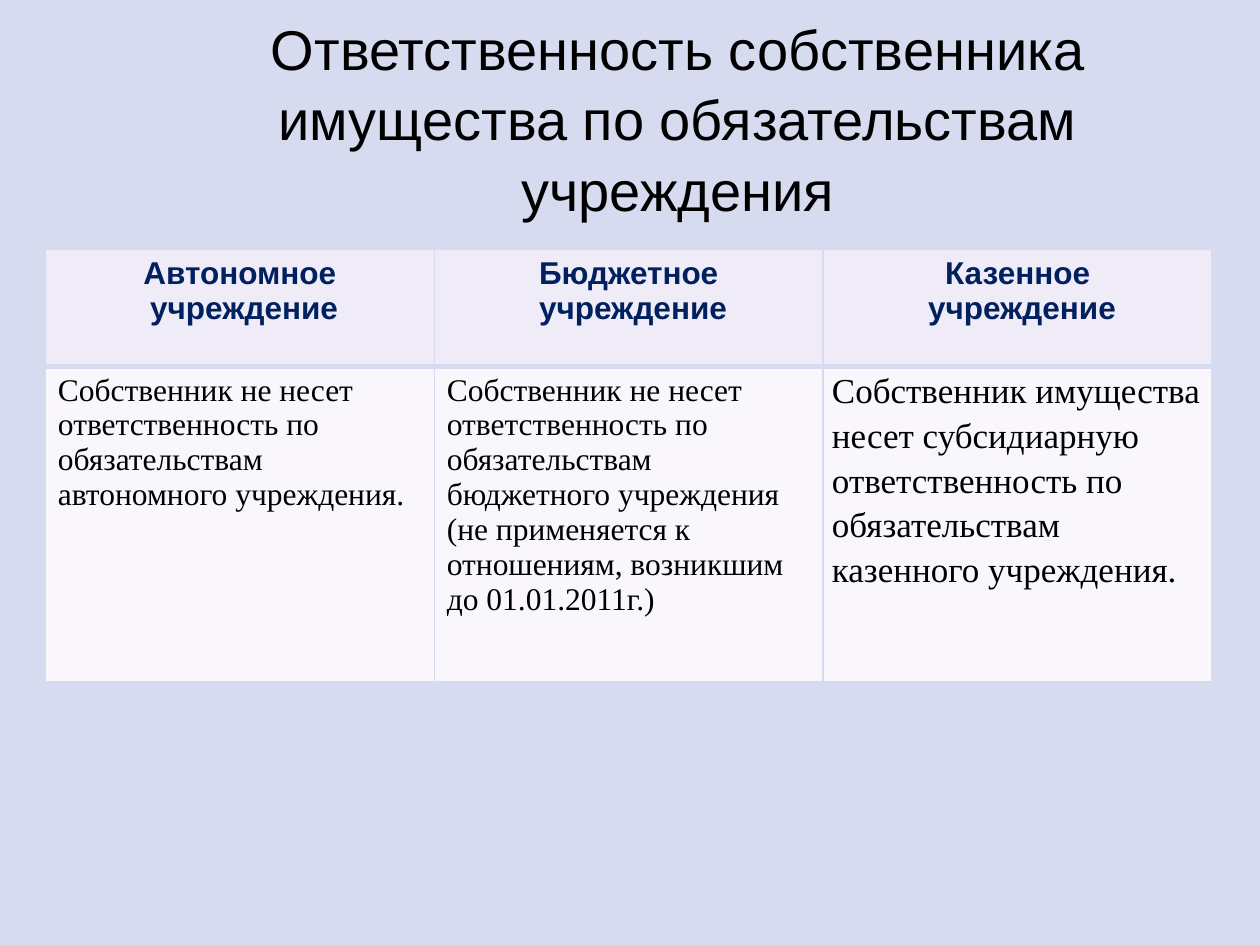
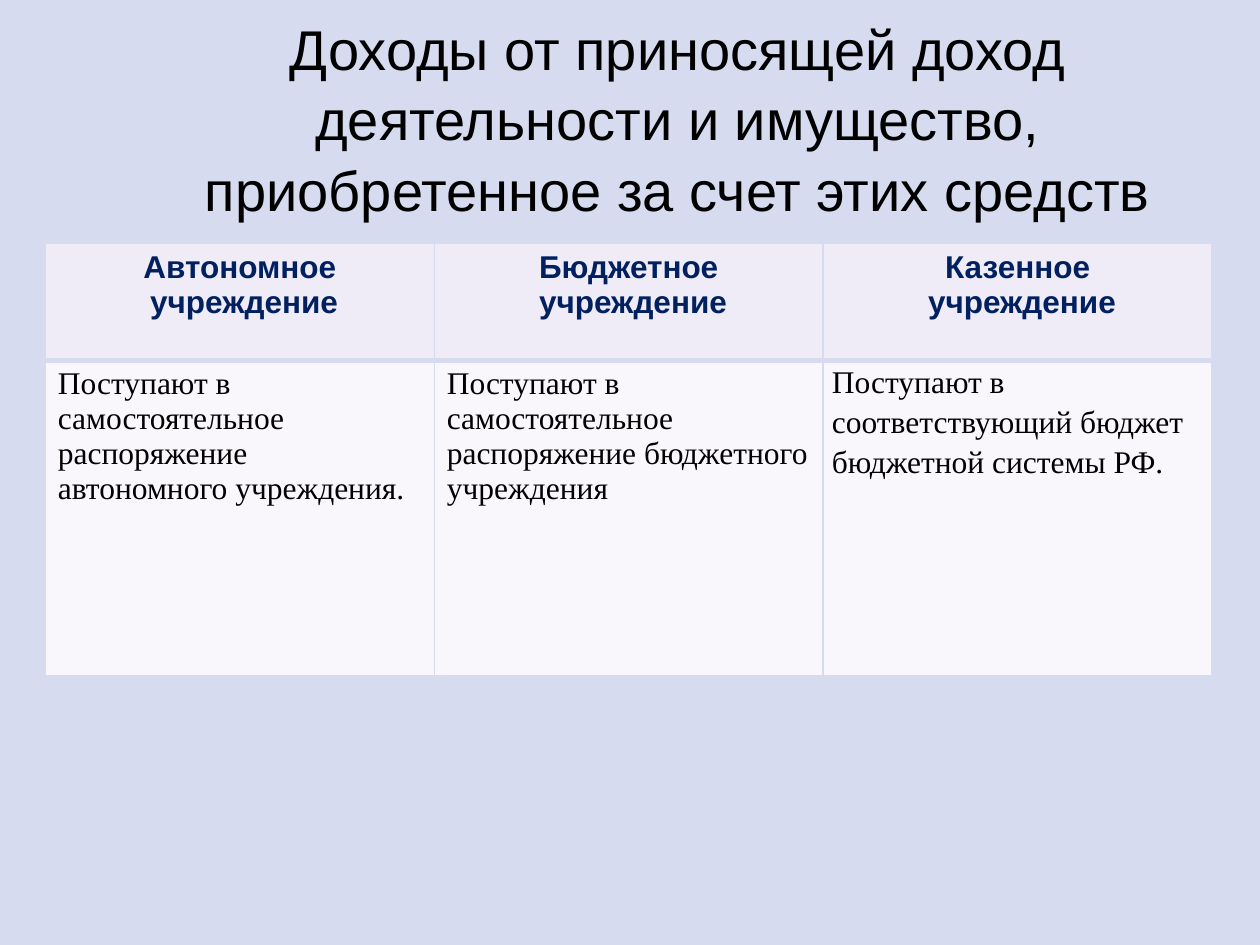
from lxml import etree
from pptx import Presentation
from pptx import util as u
from pptx.dml.color import RGBColor
from pptx.enum import text
from pptx.oxml import ns

COLORS = {"back": "D6DBEF", "head": "EFEBF7", "body": "F9F7FC", "navy": "002060", "black": "000000"}
HEADS = ["Автономное", "Бюджетное", "Казенное"]
SLIDES = [
    ("Ответственность собственника имущества по обязательствам учреждения", 1.98, 20, [
        ["Собственник не несет ответственность по обязательствам автономного учреждения."],
        ["Собственник не несет ответственность по обязательствам бюджетного учреждения",
         "(не применяется к отношениям, возникшим до 01.01.2011г.)"],
        ["Собственник имущества несет субсидиарную ответственность по обязательствам казенного учреждения."],
    ]),
    ("Доходы от приносящей доход деятельности и имущество, приобретенное за счет этих средств", 1.93, 18, [
        ["Поступают в самостоятельное распоряжение автономного учреждения."],
        ["Поступают в самостоятельное распоряжение бюджетного учреждения"],
        ["Поступают в соответствующий бюджет бюджетной системы РФ."],
    ]),
]


def write(tf, lines, size=18, font="Arial", color="black", bold=False, align=text.PP_ALIGN.LEFT, spacing=1.0):
    for i, line in enumerate(lines):
        p = tf.paragraphs[0] if i == 0 else tf.add_paragraph()
        p.alignment = align
        p.line_spacing = spacing
        r = p.add_run()
        r.text = line
        r.font.size = u.Pt(size)
        r.font.name = font
        r.font.bold = bold
        r.font.color.rgb = RGBColor.from_string(COLORS[color])


def style_cell(cell, fill, bottom):
    cell.fill.solid()
    cell.fill.fore_color.rgb = RGBColor.from_string(COLORS[fill])
    tcPr = cell._tc.get_or_add_tcPr()
    for i, (side, width) in enumerate([("lnL", 1), ("lnR", 1), ("lnT", 1), ("lnB", bottom)]):
        ln = etree.Element(ns.qn("a:" + side), w=str(u.Pt(width)))
        solid = etree.SubElement(ln, ns.qn("a:solidFill"))
        etree.SubElement(solid, ns.qn("a:srgbClr"), val=COLORS["back"])
        tcPr.insert(i, ln)


prs = Presentation()
prs.slide_width, prs.slide_height = u.Inches(10), u.Inches(7.5)
back = prs.slide_master.background.fill
back.solid()
back.fore_color.rgb = RGBColor.from_string(COLORS["back"])

for title, top, last_size, answers in SLIDES:
    s = prs.slides.add_slide(prs.slide_layouts[5])
    sp = s.shapes.title
    sp.left, sp.top, sp.width, sp.height = [u.Inches(v) for v in (0.88, 0.3, 9, 1.25)]
    tf = sp.text_frame
    tf.word_wrap = True
    tf.auto_size = text.MSO_AUTO_SIZE.NONE
    tf.vertical_anchor = text.MSO_ANCHOR.MIDDLE
    write(tf, [title], size=32, align=text.PP_ALIGN.CENTER, spacing=1.05)

    table = s.shapes.add_table(2, 3, u.Inches(0.36), u.Inches(top), u.Inches(9.26), u.Inches(3.43)).table
    table.rows[0].height, table.rows[1].height = u.Inches(0.93), u.Inches(2.5)
    for col, (head, answer) in enumerate(zip(HEADS, answers)):
        cell = table.cell(0, col)
        style_cell(cell, "head", 3)
        write(cell.text_frame, [head, " учреждение"], color="navy", bold=True, align=text.PP_ALIGN.CENTER)

        cell = table.cell(1, col)
        style_cell(cell, "body", 1)
        last = col == len(HEADS) - 1
        if last:
            cell.margin_left = cell.margin_right = u.Inches(0.07)
            cell.margin_top = cell.margin_bottom = 0
        write(cell.text_frame, answer, font="Times New Roman",
              size=last_size if last else 18, spacing=1.15 if last else 1.0)

prs.save("out.pptx")
